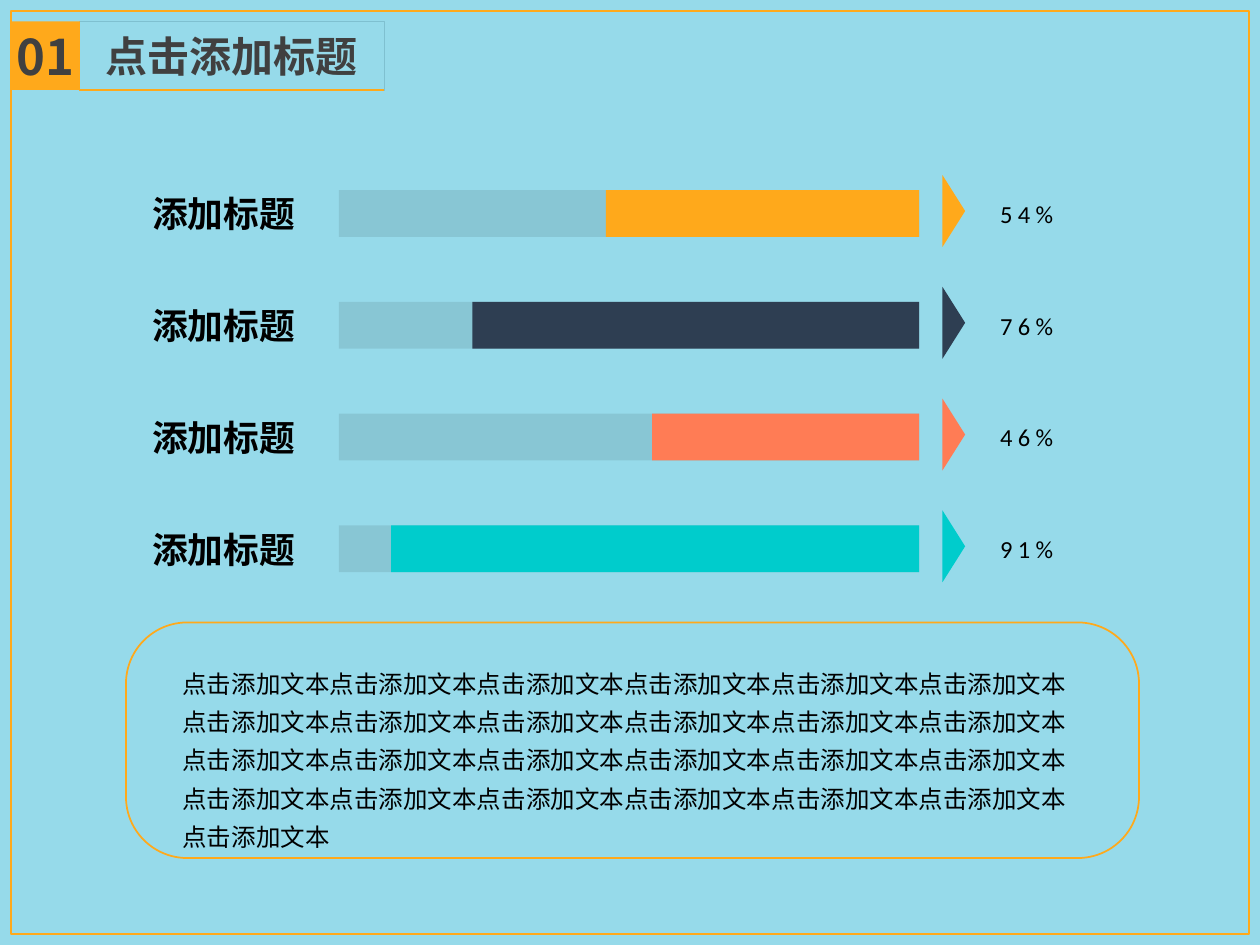
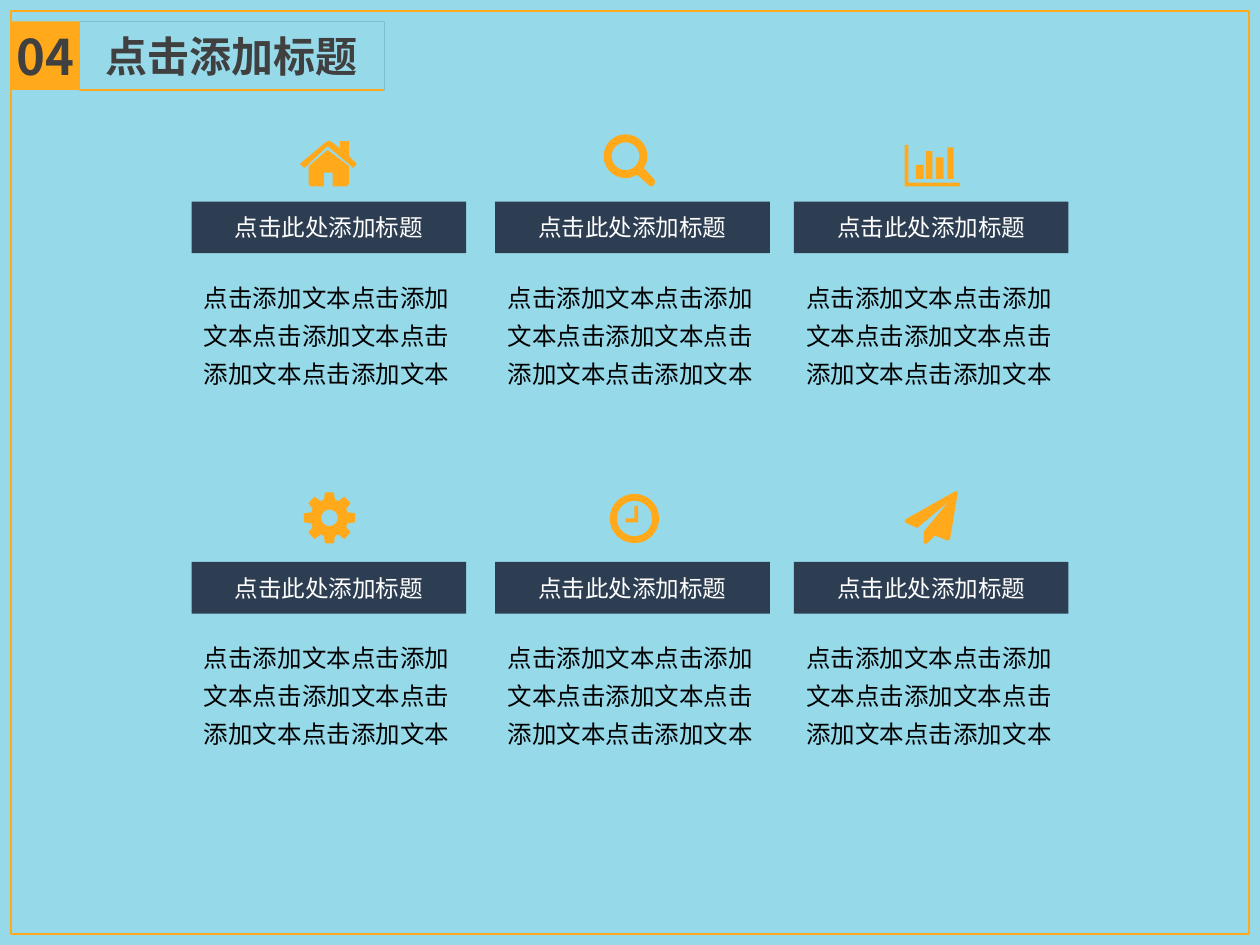
from math import cos, radians, sin

from lxml import etree
from pptx import Presentation, util as u
from pptx.dml import color
from pptx.enum import shapes, text
from pptx.oxml import ns

# Shared style
SKY, ORANGE, NAVY, CORAL, TEAL = "96DAEA", "FFA91B", "2E3E52", "FF7C55", "00CCCC"
GREY, RULE, BLACK, WHITE = "404040", "7FC0D0", "000000", "FFFFFF"
CJK, LATIN = "Noto Sans CJK SC", "Calibri"
COLUMNS, ROWS = 100, 75
HEADING = "点击添加标题"
FILLER = "点击添加文本"


def rgb(value):
    return color.RGBColor.from_string(value)


class Deck:
    """Holds the style and the current slide; lengths are grid columns and rows."""

    def __init__(self):
        self.prs = Presentation()
        self.prs.slide_width, self.prs.slide_height = u.Inches(10), u.Inches(7.5)
        self.slide = None

    def grid(self, *lengths):
        """Turn alternating columns and rows into slide units."""
        cells = self.prs.slide_width / COLUMNS, self.prs.slide_height / ROWS
        return [round(n * cells[i % 2]) for i, n in enumerate(lengths)]

    def paint(self, shape, fill=None, line=None, alpha=None, weight=1):
        if fill:
            shape.fill.solid()
            shape.fill.fore_color.rgb = rgb(fill)
            if alpha:
                tint = shape.fill._xPr.find(".//" + ns.qn("a:srgbClr"))
                etree.SubElement(tint, ns.qn("a:alpha")).set("val", str(alpha * 1000))
        else:
            shape.fill.background()
        if line:
            shape.line.color.rgb = rgb(line)
            shape.line.width = u.Pt(weight)
        else:
            shape.line.fill.background()

    def add_words(self, shape, words, size, tint=BLACK, bold=False, font=CJK,
                  align=text.PP_ALIGN.LEFT, anchor=text.MSO_ANCHOR.MIDDLE,
                  spacing=None, tracking=None, inset=None):
        frame = shape.text_frame
        frame.word_wrap = True
        frame.vertical_anchor = anchor
        if inset is not None:
            frame.margin_left = frame.margin_right = inset
            frame.margin_top = frame.margin_bottom = inset
        paragraph = frame.paragraphs[0]
        paragraph.alignment = align
        if spacing:
            paragraph.line_spacing = spacing
        run = paragraph.add_run()
        run.text = words
        run.font.size, run.font.bold, run.font.name = u.Pt(size), bold, font
        run.font.color.rgb = rgb(tint)
        props = run.font._element
        east_asian = etree.Element(ns.qn("a:ea"), typeface=font)
        props.find(ns.qn("a:latin")).addnext(east_asian)
        if tracking:
            props.set("spc", str(tracking * 100))

    def box(self, at, kind=shapes.MSO_SHAPE.RECTANGLE, **look):
        shape = self.slide.shapes.add_shape(kind, *self.grid(*at))
        shape.shadow.inherit = False
        self.paint(shape, **look)
        return shape

    def label(self, at, words, size, **style):
        shape = self.slide.shapes.add_textbox(*self.grid(*at))
        self.add_words(shape, words, size, **style)
        return shape

    def body(self, at, repeats):
        passage = self.label(at, FILLER * repeats, 14, spacing=1.3,
                             anchor=text.MSO_ANCHOR.TOP)
        passage.text_frame.auto_size = text.MSO_AUTO_SIZE.SHAPE_TO_FIT_TEXT

    def outline(self, origin, contours, fill):
        """Draw closed contours as one shape; inner contours become holes."""
        left, top = origin
        placed = [[self.grid(left + x, top + y) for x, y in c] for c in contours]
        builder = self.slide.shapes.build_freeform(*placed[0][0])
        for i, (start, *rest) in enumerate(placed):
            if i:
                builder.move_to(*start)
            builder.add_line_segments(rest, close=True)
        shape = builder.convert_to_shape()
        shape.shadow.inherit = False
        self.paint(shape, fill)

    def rule(self, ends, tint):
        line = self.slide.shapes.add_connector(
            shapes.MSO_CONNECTOR.STRAIGHT, *self.grid(*ends))
        line.line.color.rgb = rgb(tint)
        line.line.width = u.Pt(1)
        etree.SubElement(line._element.spPr, ns.qn("a:effectLst"))

    def new_slide(self, number):
        """Start a slide with its background, frame, number and heading."""
        self.slide = self.prs.slides.add_slide(self.prs.slide_layouts[5])
        backdrop = self.slide.background.fill
        backdrop.solid()
        backdrop.fore_color.rgb = rgb(SKY)
        self.box((0.9, 0.9, 98.2, 73.2), line=ORANGE)
        badge = self.box((0.9, 1.7, 5.45, 5.45), fill=ORANGE)
        centre = text.PP_ALIGN.CENTER
        self.add_words(badge, number, 28, tint=GREY, bold=True, align=centre, inset=0)
        title = self.slide.shapes.title
        title.left, title.top, title.width, title.height = self.grid(6.3, 1.7, 24.2, 5.45)
        self.paint(title, line=RULE, weight=0.25)
        title.text_frame.auto_size = text.MSO_AUTO_SIZE.NONE
        self.add_words(title, HEADING, 24, tint=GREY, bold=True, align=centre)
        self.rule((6.3, 7.15, 30.5, 7.15), ORANGE)


# Icon geometry, in hundredths of an inch
def arc(x, y, radius, start=0, end=360, step=6):
    return [(x + radius * cos(radians(a)), y + radius * sin(radians(a)))
            for a in range(start, end + 1, step)]


def block(left, top, right, bottom):
    return [(left, top), (right, top), (right, bottom), (left, bottom)]


def gear_rim(teeth=8):
    corners = ((-17, 15), (-10, 20.5), (10, 20.5), (17, 15))
    return [(r * cos(radians(360 / teeth * t + a)), r * sin(radians(360 / teeth * t + a)))
            for t in range(teeth) for a, r in corners]


HOME = [
    [(0, 18), (21, 0.5), (23, 0), (25, 0.5), (32, 6), (32, 0), (39, 0), (39, 12),
     (45, 18), (43, 21), (42, 21), (22, 4), (4, 21), (3, 21)],
    [(7, 20), (22, 7), (39, 20), (39, 34), (37, 36), (26, 36), (26, 25),
     (19, 25), (19, 36), (8, 36), (7, 34)],
]
SEARCH = [
    arc(17.5, 17, 17.3, 58, 393, 5) + [(40, 35), (41, 37), (40, 40), (38, 41), (36, 40)],
    arc(17.5, 17, 11),
]
BARS = [
    [(0, 0), (3, 0), (3, 30), (44, 30), (44, 33), (0, 33)],
    block(9, 16, 15, 27), block(17, 5, 22, 27), block(25, 10, 31, 27), block(34, 2, 39, 27),
]
GEAR = [gear_rim(), arc(0, 0, 6.5)]
CLOCK = [
    arc(0, 0, 19.5), arc(0, 0, 14),
    [(0, -10), (3, -10), (3, 3), (-7, 3), (-7, 0), (0, 0)],
]
PLANE = [[(42, 2), (36, 38), (34, 39), (24, 35), (18, 41), (16, 42), (15, 40), (15, 32),
          (35, 8), (10, 29), (1, 25), (0, 23), (1, 22), (40, 0), (42, 0)]]


def progress_slide(deck):
    deck.new_slide("01")
    first, pitch, thick = 15.1, 8.87, 3.7
    track_left, track = 26.9, 46.05
    # Colour, percentage shown, share of the track that is filled
    measures = [(ORANGE, 54, 0.54), (NAVY, 76, 0.77), (CORAL, 46, 0.46), (TEAL, 91, 0.91)]
    for i, (tint, percent, share) in enumerate(measures):
        top = first + i * pitch
        filled = track * share
        deck.box((track_left, top, track, thick), fill=BLACK, alpha=9)
        deck.box((track_left + track - filled, top, filled, thick), fill=tint)
        deck.outline((74.8, top - 1.2), [[(0, 0), (1.8, 2.85), (0, 5.7)]], tint)
        deck.label((11.1, top, 14.5, thick), "添加标题", 20.4, bold=True)
        deck.label((78.4, top, 14.7, thick), f"{percent}%", 14, font=LATIN, tracking=3)
    # Summary panel
    panel = deck.box((10, 49.4, 80.4, 18.7), shapes.MSO_SHAPE.ROUNDED_RECTANGLE, line=ORANGE)
    panel.adjustments[0] = 0.26
    deck.body((13.5, 51.9, 73.4, 15.9), 25)


def topics_slide(deck):
    deck.new_slide("04")
    icons = [
        (HOME, (23.8, 11.2)), (SEARCH, (47.9, 10.7)), (BARS, (71.8, 11.5)),
        (GEAR, (26.15, 41.1)), (CLOCK, (50.35, 41.15)), (PLANE, (71.8, 39)),
    ]
    cells = [(left, top) for top in (16, 44.6) for left in (15.2, 39.3, 63)]
    for (icon, origin), (left, top) in zip(icons, cells):
        contours = [[(x / 10, y / 10) for x, y in contour] for contour in icon]
        deck.outline(origin, contours, ORANGE)
        banner = deck.box((left, top, 21.8, 4.1), fill=NAVY)
        deck.add_words(banner, "点击此处添加标题", 13.5, tint=WHITE, align=text.PP_ALIGN.CENTER)
        deck.body((left, top + 5.25, 21.7, 9.8), 5)


def main():
    deck = Deck()
    progress_slide(deck)
    topics_slide(deck)
    deck.prs.save("out.pptx")


if __name__ == "__main__":
    main()
